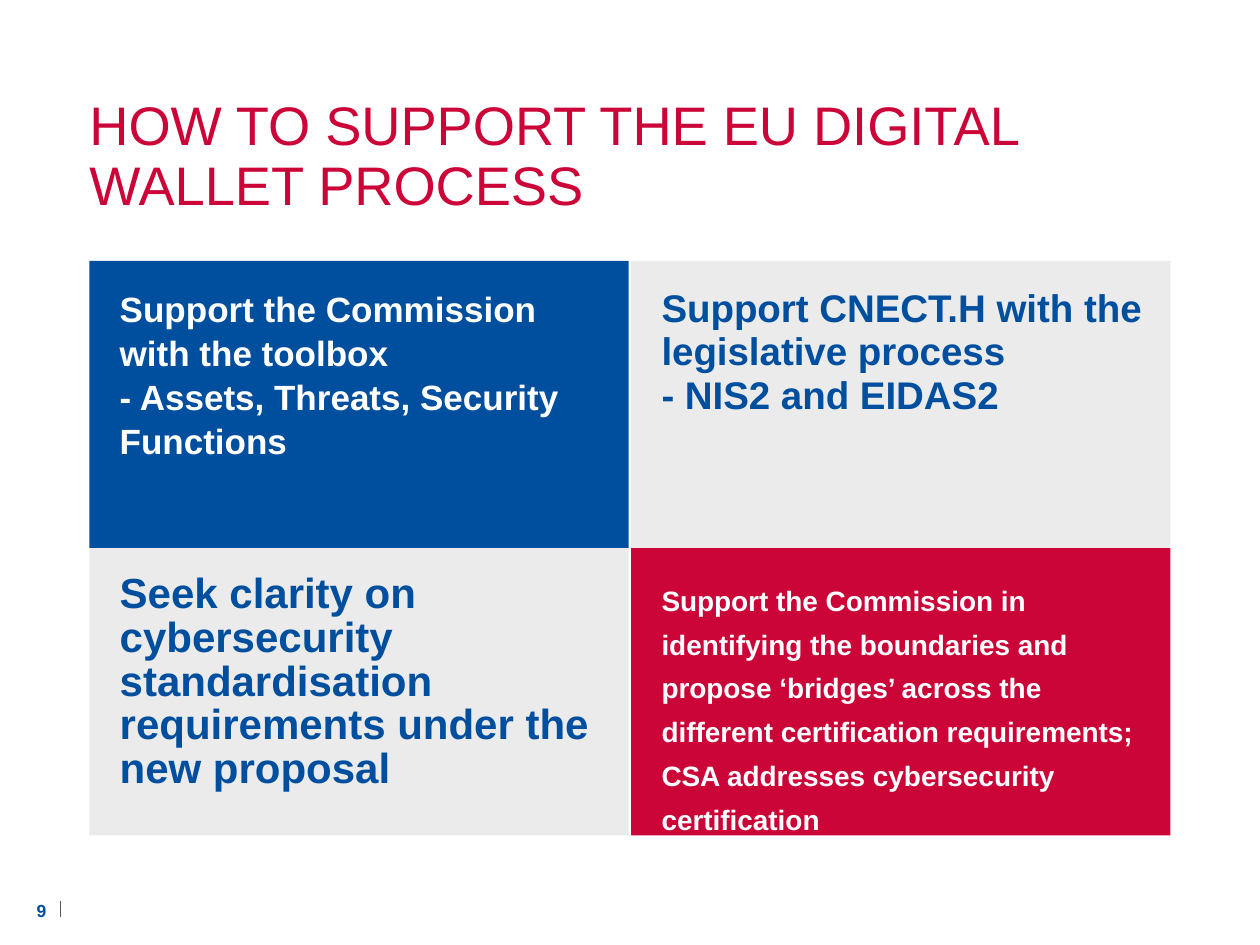
"""Build the slide on supporting the EU digital wallet process."""
import pptx
import pptx.util
import pptx.dml.color
import pptx.enum.shapes
import pptx.enum.text
from lxml import etree
from pptx.util import Inches, Pt

RGBColor = pptx.dml.color.RGBColor
Align = pptx.enum.text.PP_ALIGN
Anchor = pptx.enum.text.MSO_ANCHOR

BLUE = RGBColor(0x00, 0x4F, 0x9F)
RED = RGBColor(0xCB, 0x05, 0x38)
PALE = RGBColor(0xEB, 0xEB, 0xEB)
WHITE = RGBColor(0xFF, 0xFF, 0xFF)
DARK = RGBColor(0x57, 0x57, 0x56)

TITLE = "HOW TO SUPPORT THE EU DIGITAL WALLET PROCESS"
PAGE = "9"
ACTIONS = [
    (["Support the Commission with the toolbox",
      "- Assets, Threats, Security Functions"], 20, BLUE, WHITE),
    (["Support CNECT.H with the legislative process",
      "- NIS2 and EIDAS2"], 22, PALE, BLUE),
    (["Seek clarity on cybersecurity standardisation requirements "
      "under the new proposal"], 24, PALE, BLUE),
    (["Support the Commission in identifying the boundaries and propose "
      "‘bridges’ across the different certification requirements; "
      "CSA addresses cybersecurity certification"], 16, RED, WHITE),
]
GRID_LEFT, GRID_TOP = 0.71, 2.07
TILE_WIDTH, TILE_HEIGHT = 4.28, 2.28
COLUMN_GAP = 0.02


def write(shape, lines, size, color, insets, bold=True, spacing=None,
          align=Align.LEFT, anchor=Anchor.TOP):
    frame = shape.text_frame
    frame.word_wrap = True
    frame.vertical_anchor = anchor
    (frame.margin_left, frame.margin_top,
     frame.margin_right, frame.margin_bottom) = map(Inches, insets)
    frame.text = "\n".join(lines)
    for paragraph in frame.paragraphs:
        paragraph.alignment = align
        if spacing:
            paragraph.line_spacing = Pt(spacing)
        paragraph.font.name = "Arial"
        paragraph.font.size = Pt(size)
        paragraph.font.bold = bold
        paragraph.font.color.rgb = color


def main():
    deck = pptx.Presentation()
    deck.slide_width, deck.slide_height = Inches(10), Inches(7.5)
    slide = deck.slides.add_slide(deck.slide_layouts[6])
    shapes = slide.shapes

    divider = shapes.add_connector(
        pptx.enum.shapes.MSO_CONNECTOR.STRAIGHT,
        Inches(0.48), Inches(7.15), Inches(0.48), Inches(7.28))
    divider.line.color.rgb = DARK
    divider.line.width = Pt(1)
    etree.SubElement(divider._element.spPr, pptx.oxml.ns.qn("a:effectLst"))

    page = shapes.add_textbox(*map(Inches, (0.2, 7.1, 0.26, 0.4)))
    write(page, [PAGE], 10, BLUE, (0, 0, 0, 0.21),
          align=Align.CENTER, anchor=Anchor.BOTTOM)

    title = shapes.add_textbox(*map(Inches, (0, 0.77, 9.45, 0.5)))
    write(title, [TITLE], 31, RED, (0.71, 0, 0.75, 0), bold=False, spacing=34)

    for index, (lines, size, fill, color) in enumerate(ACTIONS):
        row, column = divmod(index, 2)
        left = GRID_LEFT + column * (TILE_WIDTH + COLUMN_GAP)
        top = GRID_TOP + row * TILE_HEIGHT
        tile = shapes.add_shape(
            pptx.enum.shapes.MSO_SHAPE.RECTANGLE,
            *map(Inches, (left, top, TILE_WIDTH, TILE_HEIGHT)))
        tile.shadow.inherit = False
        tile.fill.solid()
        tile.fill.fore_color.rgb = fill
        tile.line.fill.background()
        write(tile, lines, size, color, (0.24, 0.2, 0.2, 0.2), spacing=25)

    deck.save("out.pptx")


if __name__ == "__main__":
    main()
